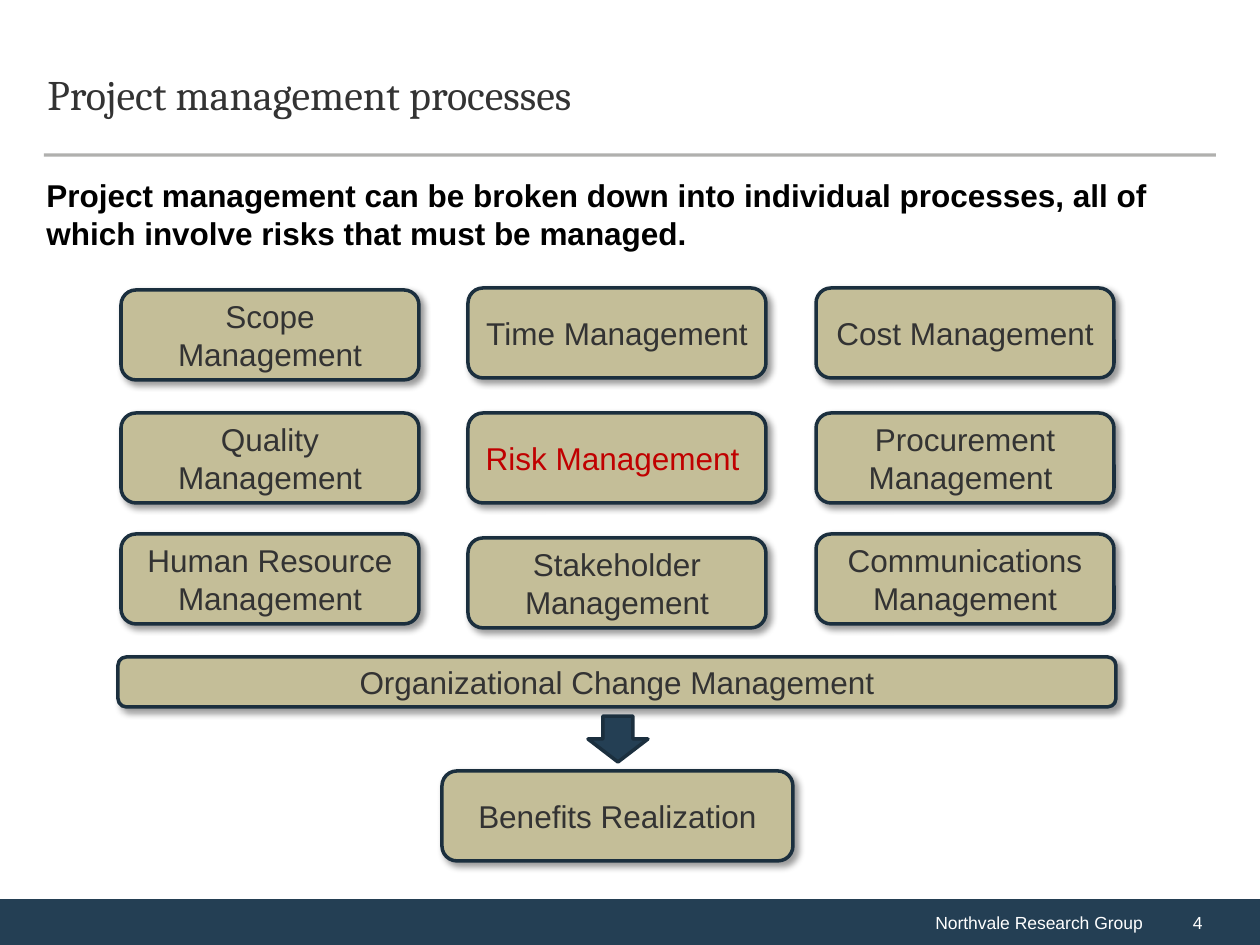
from lxml import etree
from pptx import Presentation
from pptx.dml.color import RGBColor
from pptx.enum.shapes import MSO_CONNECTOR, MSO_SHAPE
from pptx.enum.text import MSO_ANCHOR, PP_ALIGN
from pptx.oxml import parse_xml
from pptx.oxml.ns import nsdecls, qn
from pptx.util import Emu, Pt

SCALE = 914400 / 126
NAVY, EDGE, SAND = "243F54", "1B2F3E", "C4BE98"
GREY, RED, WHITE = "333333", "C00000", "FFFFFF"
SHADOW = (
    f'<a:effectLst {nsdecls("a")}>'
    '<a:outerShdw blurRad="50800" dist="38100" dir="2700000" algn="tl" rotWithShape="0">'
    '<a:srgbClr val="000000"><a:alpha val="40000"/></a:srgbClr>'
    '</a:outerShdw></a:effectLst>'
)

presentation = Presentation()
presentation.slide_width = Emu(round(1260 * SCALE))
presentation.slide_height = Emu(round(945 * SCALE))
slide = presentation.slides.add_slide(presentation.slide_layouts[6])


def add_box(kind, box, fill=None, line=None):
    """Add a preset shape, or a text box when kind is None."""
    place = [Emu(round(px * SCALE)) for px in box]
    if kind is None:
        return slide.shapes.add_textbox(*place)
    shape = slide.shapes.add_shape(kind, *place)
    shape.shadow.inherit = False
    shape.fill.solid()
    shape.fill.fore_color.rgb = RGBColor.from_string(fill)
    if line:
        shape.line.color.rgb = RGBColor.from_string(line)
        shape.line.width = Pt(2)
    else:
        shape.line.fill.background()
    return shape


def set_text(shape, text, size, color, align=PP_ALIGN.LEFT, font="Arial", bold=False):
    frame = shape.text_frame
    frame.word_wrap = True
    frame.vertical_anchor = MSO_ANCHOR.MIDDLE
    frame.text = text
    paragraph = frame.paragraphs[0]
    paragraph.alignment = align
    run_font = paragraph.runs[0].font
    run_font.name, run_font.size, run_font.bold = font, Pt(size), bold
    run_font.color.rgb = RGBColor.from_string(color)
    return frame


# Footer band
footer = add_box(MSO_SHAPE.RECTANGLE, (0, 899, 1155, 46), NAVY)
set_text(footer, "Northvale Research Group", 10, WHITE, PP_ALIGN.RIGHT)
page_number = add_box(MSO_SHAPE.RECTANGLE, (1155, 899, 105, 46), NAVY)
set_text(page_number, "4", 10, WHITE).margin_left = Emu(round(38 * SCALE))

# Title and the rule below it
title = add_box(None, (35, 37, 1188, 118))
title_frame = set_text(title, "Project management processes", 24, GREY, font="Cambria")
title_frame.paragraphs[0].line_spacing = Pt(26)
ends = [Emu(round(px * SCALE)) for px in (44, 155, 1216, 155)]
rule = slide.shapes.add_connector(MSO_CONNECTOR.STRAIGHT, *ends)
rule.line.width = Pt(1.75)
rule.line.color.rgb = RGBColor.from_string("45433E")
rule_color = next(rule.line._get_or_add_ln().iter(qn("a:srgbClr")))
etree.SubElement(rule_color, qn("a:alpha")).set("val", "42000")
etree.SubElement(rule._element.spPr, qn("a:effectLst"))

# Introduction
introduction = add_box(None, (34, 170, 1189, 89))
set_text(
    introduction,
    "Project management can be broken down into individual processes, "
    "all of which involve risks that must be managed.",
    18, "000000", bold=True,
).vertical_anchor = MSO_ANCHOR.TOP

# Process boxes: a column is its left edge with (top, text) pairs
columns = [
    (121, [(290, "Scope Management"), (413, "Quality Management"),
           (534, "Human Resource Management")]),
    (468, [(288, "Time Management"), (413, "Risk Management "),
           (538, "Stakeholder Management")]),
    (816, [(288, "Cost Management"), (413, "Procurement Management "),
           (534, "Communications Management")]),
]
boxes = [(text, (left, top, 298, 90)) for left, cells in columns for top, text in cells]
boxes += [
    ("Organizational Change Management", (118, 657, 998, 50)),
    ("Benefits Realization", (442, 771, 351, 90)),
]
for text, box in boxes:
    shape = add_box(MSO_SHAPE.ROUNDED_RECTANGLE, box, SAND, EDGE)
    properties = shape._element.spPr
    properties.replace(properties.find(qn("a:effectLst")), parse_xml(SHADOW))
    color = RED if text.startswith("Risk") else GREY
    set_text(shape, text, 18, color, PP_ALIGN.CENTER)

# Arrow to the benefits
add_box(MSO_SHAPE.DOWN_ARROW, (588, 716, 60, 46), NAVY, EDGE)

presentation.save("out.pptx")
